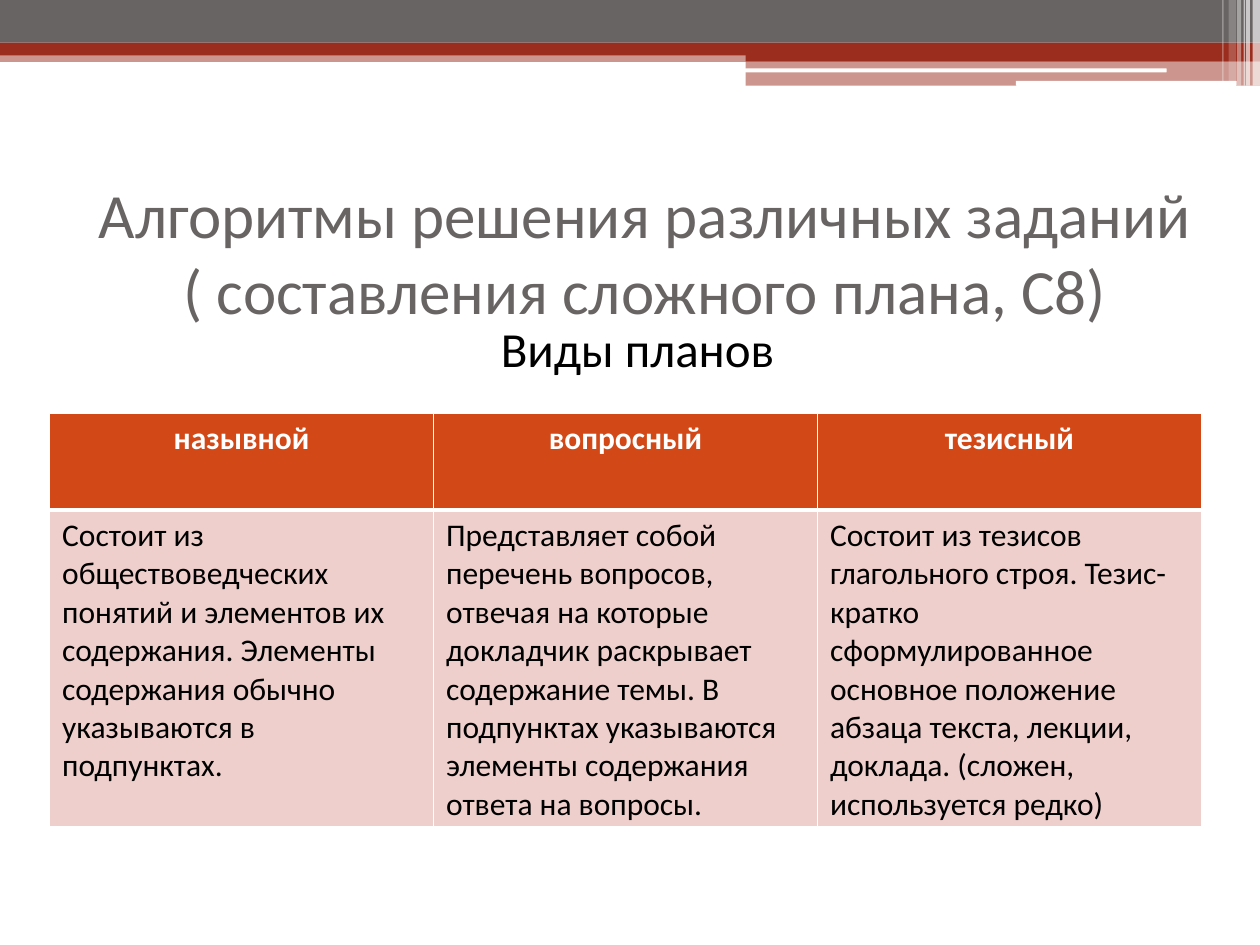
import pptx
import pptx.dml.color
import pptx.enum.shapes
import pptx.enum.text
import pptx.oxml
import pptx.oxml.ns
import pptx.util

Cm = pptx.util.Cm
RGBColor = pptx.dml.color.RGBColor
MSO_SHAPE = pptx.enum.shapes.MSO_SHAPE
PP_ALIGN = pptx.enum.text.PP_ALIGN
MSO_ANCHOR = pptx.enum.text.MSO_ANCHOR

GRAY = RGBColor(0x69, 0x64, 0x64)
DARK_RED = RGBColor(0x9B, 0x2D, 0x1F)
ORANGE = RGBColor(0xD3, 0x48, 0x17)
PINK = RGBColor(0xEF, 0xCF, 0xCC)
WHITE = RGBColor(0xFF, 0xFF, 0xFF)
BLACK = RGBColor(0, 0, 0)

TITLE_FORMAT = {"name": "Calibri", "size": pptx.util.Pt(36)}
SUBTITLE_FORMAT = {"name": "Calibri", "size": pptx.util.Pt(28)}
HEADER_FORMAT = {"name": "Calibri", "size": pptx.util.Pt(18), "bold": True}
BODY_FORMAT = {"name": "Calibri", "size": pptx.util.Pt(18), "bold": False}

BANDS = [
    (0, 1.02, 25.4, 0.23, DARK_RED, 50),
    (0, 0, 25.4, 0.86, GRAY, 100),
    (0, 0.86, 25.4, 0.26, DARK_RED, 100),
    (15.03, 0.99, 10.37, 0.24, DARK_RED, 100),
    (15.03, 1.23, 10.37, 0.5, DARK_RED, 50),
]
ROUNDED_LINES = [
    (15.01, 1.38, 8.51, 0.08),
    (20.48, 1.63, 4.45, 0.1),
]
STRIPES = [
    (25.25, 0.15, 1.73, 65),
    (25.12, 0.08, 1.73, 65),
    (25.07, 0.03, 1.73, 60),
    (24.94, 0.08, 1.73, 40),
    (24.77, 0.15, 1.63, 20),
    (24.64, 0.03, 1.63, 30),
]
PLANS = [
    ("назывной",
     "Состоит из обществоведческих понятий и элементов их содержания. "
     "Элементы содержания обычно указываются в подпунктах."),
    ("вопросный",
     "Представляет собой перечень вопросов, отвечая на которые докладчик "
     "раскрывает содержание темы. В подпунктах указываются элементы "
     "содержания ответа на вопросы."),
    ("тезисный",
     "Состоит из тезисов глагольного строя. Тезис- кратко сформулированное "
     "основное положение абзаца текста, лекции, доклада. (сложен, "
     "используется редко)"),
]


def add_block(slide, left, top, width, height, color, opacity=100, kind=MSO_SHAPE.RECTANGLE):
    """Add a borderless filled shape with the given opacity in percent."""
    shape = slide.shapes.add_shape(kind, Cm(left), Cm(top), Cm(width), Cm(height))
    shape.shadow.inherit = False
    shape.line.fill.background()
    shape.fill.solid()
    shape.fill.fore_color.rgb = color
    if opacity < 100:
        color_element = shape.fill._xPr.find(".//" + pptx.oxml.ns.qn("a:srgbClr"))
        alpha = pptx.oxml.parse_xml(
            f'<a:alpha {pptx.oxml.ns.nsdecls("a")} val="{opacity * 1000}"/>')
        color_element.append(alpha)
    return shape


def write_text(text_frame, text, color, font_format, alignment):
    """Fill the first paragraph of a text frame and format its runs."""
    paragraph = text_frame.paragraphs[0]
    paragraph.text = text
    paragraph.alignment = alignment
    for run in paragraph.runs:
        run.font.color.rgb = color
        for name, value in font_format.items():
            setattr(run.font, name, value)


def add_text(slide, left, top, width, height, text, color, font_format, anchor):
    """Add a wrapped text box with centred text."""
    box = slide.shapes.add_textbox(Cm(left), Cm(top), Cm(width), Cm(height))
    box.text_frame.word_wrap = True
    box.text_frame.vertical_anchor = anchor
    write_text(box.text_frame, text, color, font_format, PP_ALIGN.CENTER)


def set_borders(cell, widths):
    """Draw white cell borders with widths in points, keyed by side."""
    properties = cell._tc.get_or_add_tcPr()
    for side, width in widths.items():
        properties.append(pptx.oxml.parse_xml(
            f'<a:ln{side} {pptx.oxml.ns.nsdecls("a")} w="{pptx.util.Pt(width)}">'
            f'<a:solidFill><a:srgbClr val="{WHITE}"/></a:solidFill></a:ln{side}>'))


def fill_cell(cell, text, fill, color, font_format, alignment, widths):
    """Write and colour one table cell."""
    write_text(cell.text_frame, text, color, font_format, alignment)
    set_borders(cell, widths)
    cell.fill.solid()
    cell.fill.fore_color.rgb = fill


def add_plan_table(slide):
    """Add the table that describes the kinds of plan."""
    frame = slide.shapes.add_table(2, len(PLANS), Cm(1), Cm(8.33), Cm(23.22), Cm(8.33))
    table = frame.table
    for row, height in zip(table.rows, (1.95, 6.38)):
        row.height = Cm(height)
    for column, (name, description) in enumerate(PLANS):
        fill_cell(table.cell(0, column), name, ORANGE, WHITE, HEADER_FORMAT,
                  PP_ALIGN.CENTER, {"L": 1, "R": 1, "T": 1, "B": 3})
        fill_cell(table.cell(1, column), description, PINK, BLACK, BODY_FORMAT,
                  PP_ALIGN.LEFT, {"L": 1, "R": 1, "T": 3, "B": 1})


def main():
    """Build and save the slide."""
    presentation = pptx.Presentation()
    presentation.slide_width = Cm(25.4)
    presentation.slide_height = Cm(19.05)
    slide = presentation.slides.add_slide(presentation.slide_layouts[6])
    for band in BANDS:
        add_block(slide, *band)
    for line in ROUNDED_LINES:
        add_block(slide, *line, WHITE, kind=MSO_SHAPE.ROUNDED_RECTANGLE)
    for left, width, height, opacity in STRIPES:
        add_block(slide, left, 0, width, height, WHITE, opacity)
    add_text(slide, 1.57, 3.58, 22.86, 2.97,
             "Алгоритмы решения различных заданий\v( составления сложного плана, С8)",
             GRAY, TITLE_FORMAT, MSO_ANCHOR.MIDDLE)
    add_text(slide, 1.42, 6.3, 22.86, 12, "Виды планов",
             BLACK, SUBTITLE_FORMAT, MSO_ANCHOR.TOP)
    add_plan_table(slide)
    presentation.save("out.pptx")


if __name__ == "__main__":
    main()
